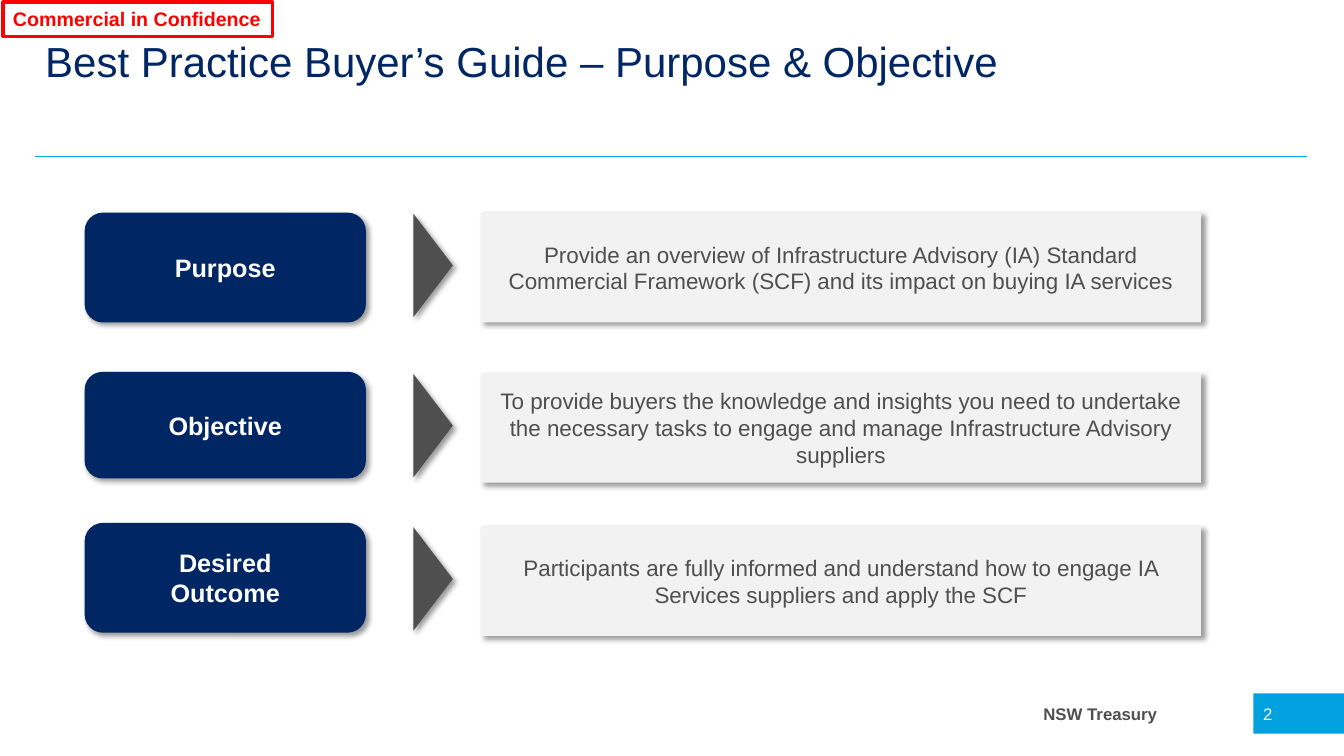
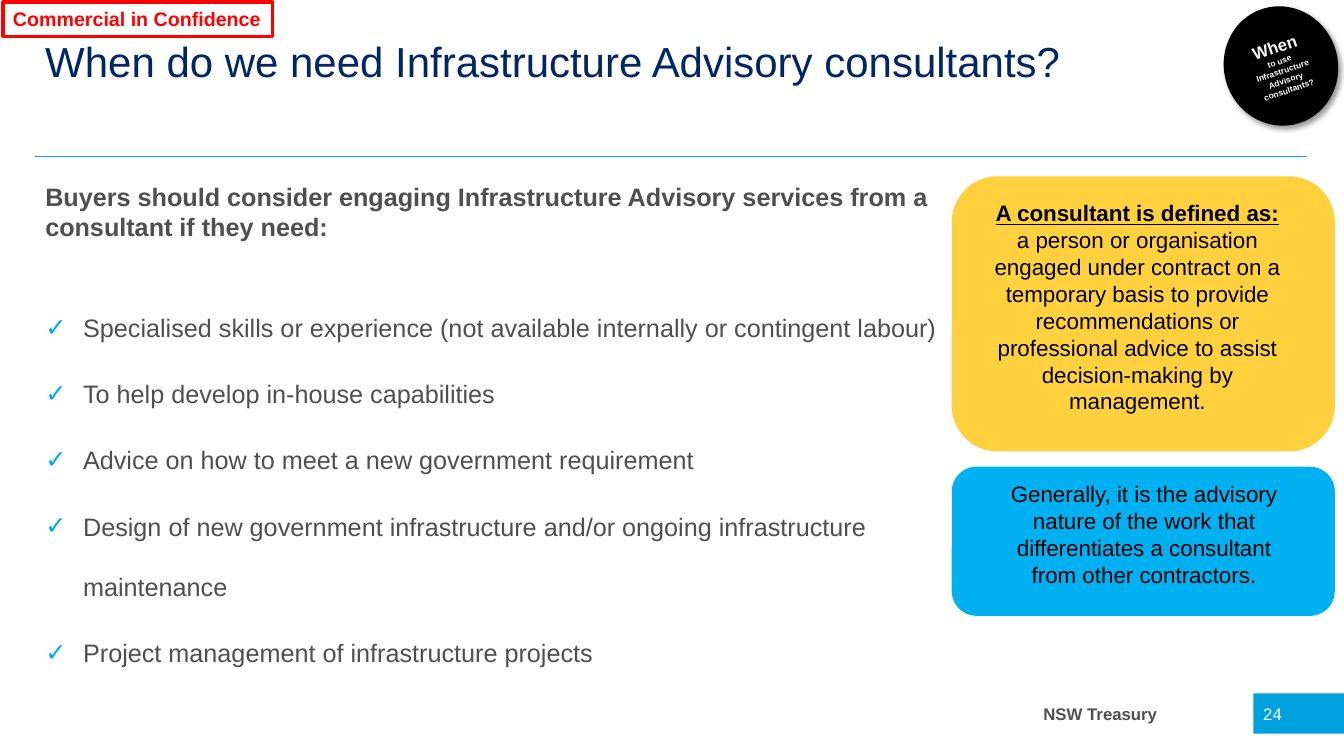
import pptx
import pptx.util
import pptx.dml.color
import pptx.enum.shapes
import pptx.enum.text
import pptx.oxml
import pptx.oxml.ns

Pt = pptx.util.Pt
KIND = pptx.enum.shapes.MSO_SHAPE
ALIGN = pptx.enum.text.PP_ALIGN
ANCHOR = pptx.enum.text.MSO_ANCHOR

HUE = {
    "navy": "002664", "grey": "4F4F4F", "pale": "F2F2F2", "rule": "00ABE6",
    "page": "00A1DE", "sky": "00B0F0", "gold": "FFD13F", "red": "FF0000",
    "white": "FFFFFF", "black": "000000",
}
WIDE, HIGH = pptx.util.Inches(13.33), pptx.util.Inches(7.5)
FULL = (0, 0, 100, 100)

# Text looks: the colour name and the font values
LOOK = {
    "title": ("navy", {"size": Pt(30)}),
    "stamp": ("red", {"size": Pt(14), "bold": True}),
    "foot": ("grey", {"size": Pt(12), "bold": True}),
    "page": ("white", {"size": Pt(12)}),
    "label": ("white", {"size": Pt(18), "bold": True}),
    "panel": ("grey", {"size": Pt(16)}),
    "lead": ("grey", {"size": Pt(18), "bold": True}),
    "item": ("grey", {"size": Pt(18)}),
    "note": ("black", {"size": Pt(16)}),
    "term": ("black", {"size": Pt(16), "bold": True, "underline": True}),
    "big": ("white", {"size": Pt(12), "bold": True}),
    "small": ("white", {"size": Pt(6), "bold": True}),
}


def tone(name):
    return pptx.dml.color.RGBColor.from_string(HUE[name])


def xml(tag, body="", attrs=""):
    space = pptx.oxml.ns.nsdecls("a")
    return pptx.oxml.parse_xml(f"<a:{tag} {space} {attrs}>{body}</a:{tag}>")


def part(box, x, y, w, h):
    """Box inside a box, all in percent of the outer one."""
    left, top, wide, high = box
    return (left + wide * x / 100, top + high * y / 100,
            wide * w / 100, high * h / 100)


def place(box):
    """Percent of the slide to lengths."""
    return [round(v * full / 100) for v, full in zip(box, (WIDE, HIGH) * 2)]


def shade(shape):
    body = ('<a:outerShdw blurRad="50800" dist="38100" dir="2700000" '
            'algn="tl" rotWithShape="0"><a:srgbClr val="000000">'
            '<a:alpha val="40000"/></a:srgbClr></a:outerShdw>')
    props = shape._element.spPr
    for old in props.findall(pptx.oxml.ns.qn("a:effectLst")):
        props.remove(old)
    props.append(xml("effectLst", body))


def draw(slide, kind, box, fill=None, edge=None, soft=False, turn=0):
    shape = slide.shapes.add_shape(kind, *place(box))
    shape.shadow.inherit = False
    shape.rotation = turn
    if fill:
        shape.fill.solid()
        shape.fill.fore_color.rgb = tone(fill)
    else:
        shape.fill.background()
    if edge:
        shape.line.color.rgb = tone(edge)
        shape.line.width = Pt(2.25)
    else:
        shape.line.fill.background()
    if soft:
        shade(shape)
    return shape


def style(font, look):
    hue, values = LOOK[look]
    for key, value in {"name": "Arial", **values}.items():
        setattr(font, key, value)
    font.color.rgb = tone(hue)


def write(shape, lines, align=ALIGN.CENTER, anchor=ANCHOR.MIDDLE, wrap=True):
    """Each line is a list of (text, look) runs."""
    frame = shape.text_frame
    frame.word_wrap = wrap
    frame.vertical_anchor = anchor
    for i, line in enumerate(lines):
        para = frame.add_paragraph() if i else frame.paragraphs[0]
        para.alignment = align
        for text, look in line:
            run = para.add_run()
            run.text = text
            style(run.font, look)
    return frame.paragraphs


def label(slide, box, lines, align=ALIGN.LEFT):
    shape = slide.shapes.add_textbox(*place(box))
    return write(shape, lines, align, ANCHOR.TOP)


def base(deck, title, page):
    """Slide with the title, rule, footer and stamp."""
    slide = deck.slides.add_slide(deck.slide_layouts[6])
    x, y, w, h = place((2.63, 20.67, 94.6, 0))
    rule = slide.shapes.add_connector(
        pptx.enum.shapes.MSO_CONNECTOR.STRAIGHT, x, y, x + w, y)
    rule.line.color.rgb = tone("rule")
    rule.line.width = Pt(1)
    rule._element.spPr.append(xml("effectLst"))
    label(slide, (76.89, 92.4, 13.43, 4), [[("NSW Treasury", "foot")]])
    label(slide, (2.63, 4, 94.6, 16.67), [[(title, "title")]])
    tab = draw(slide, KIND.RECTANGLE, (93.25, 91.73, 6.75, 5.33), "page")
    write(tab, [[(page, "page")]], ALIGN.LEFT)
    stamp = draw(slide, KIND.RECTANGLE, (0.23, 0.27, 20.03, 4.53), edge="red")
    write(stamp, [[("Commercial in Confidence", "stamp")]],
          ALIGN.LEFT, ANCHOR.TOP, False)
    return slide


def goal(slide, box, names, text, top, tall):
    """Row: label, arrow and panel."""
    tag = draw(slide, KIND.ROUNDED_RECTANGLE, part(box, 0, top, 25.2, tall),
               "navy", soft=True)
    write(tag, [[(name, "label")] for name in names])
    panel = draw(slide, KIND.RECTANGLE, part(box, 35.5, 0, 64.5, 100),
                 "pale", soft=True)
    write(panel, [[(text, "panel")]])
    draw(slide, KIND.FLOWCHART_EXTRACT, part(box, 26.56, 30, 9.3, 36),
         "grey", soft=True, turn=90)


def needs(slide, box, lead, items):
    """Lead sentence with a ticked list."""
    lines = [[(lead, "lead")]] + [[(item, "item")] for item in items]
    paras = label(slide, box, lines)
    for i, para in enumerate(paras[1:]):
        props = para._p.get_or_add_pPr()
        props.set("marL", "342900")
        props.set("indent", "-342900")
        props.append(xml("buClr", f'<a:srgbClr val="{HUE["rule"]}"/>'))
        props.append(xml("buFont", attrs='typeface="Arial"'))
        props.append(xml("buChar", attrs='char="✓"'))
        para.line_spacing = 2.0
        para.space_before = Pt(4 if i else 29)


def card(slide, box, fill, inner, runs):
    """Rounded card with its text."""
    draw(slide, KIND.ROUNDED_RECTANGLE, box, fill)
    label(slide, part(box, *inner), [runs], ALIGN.CENTER)


def badge(slide, box):
    disc = draw(slide, KIND.FLOWCHART_CONNECTOR, box, "black",
                soft=True, turn=341.5)
    write(disc, [[("When", "big")],
                 [("to use Infrastructure Advisory consultants?", "small")]])


def aims(deck):
    slide = base(deck, "Best Practice Buyer’s Guide – Purpose & Objective", "2")
    rows = [
        (28.13, ["Purpose"], "Provide an overview of Infrastructure Advisory "
         "(IA) Standard Commercial Framework (SCF) and its impact on buying "
         "IA services", 0, 100),
        (49.33, ["Objective"], "To provide buyers the knowledge and insights "
         "you need to undertake the necessary tasks to engage and manage "
         "Infrastructure Advisory suppliers", -1, 97),
        (69.6, ["Desired", "Outcome"], "Participants are fully informed and "
         "understand how to engage IA Services suppliers and apply the SCF",
         -3, 100),
    ]
    for y, *rest in rows:
        goal(slide, part(FULL, 6.3, y, 83.05, 14.53), *rest)


def when(deck):
    slide = base(deck, "When do we need Infrastructure Advisory consultants?",
                 "24")
    needs(slide, part(FULL, 2.63, 23.33, 68.27, 66),
          "Buyers should consider engaging Infrastructure Advisory services "
          "from a consultant if they need:",
          ["Specialised skills or experience (not available internally or "
           "contingent labour)",
           "To help develop in-house capabilities",
           "Advice on how to meet a new government requirement",
           "Design of new government infrastructure and/or ongoing "
           "infrastructure maintenance",
           "Project management of infrastructure projects"])
    badge(slide, part(FULL, 91.07, 0.8, 8.48, 15.87))
    card(slide, part(FULL, 70.82, 61.73, 28.5, 19.73), "sky",
         (8.2, 6, 84, 82.4),
         [("Generally, it is the advisory nature of the work that "
           "differentiates a consultant from other contractors.", "note")])
    card(slide, part(FULL, 70.82, 23.33, 28.5, 36.4), "gold",
         (6.6, 6.6, 83.7, 82.8),
         [("A consultant is defined as:", "term"),
          (" a person or organisation engaged under contract on a temporary "
           "basis to provide recommendations or professional advice to assist "
           "decision-making by management.", "note")])


def main():
    deck = pptx.Presentation()
    deck.slide_width, deck.slide_height = WIDE, HIGH
    aims(deck)
    when(deck)
    deck.save("out.pptx")


if __name__ == "__main__":
    main()
